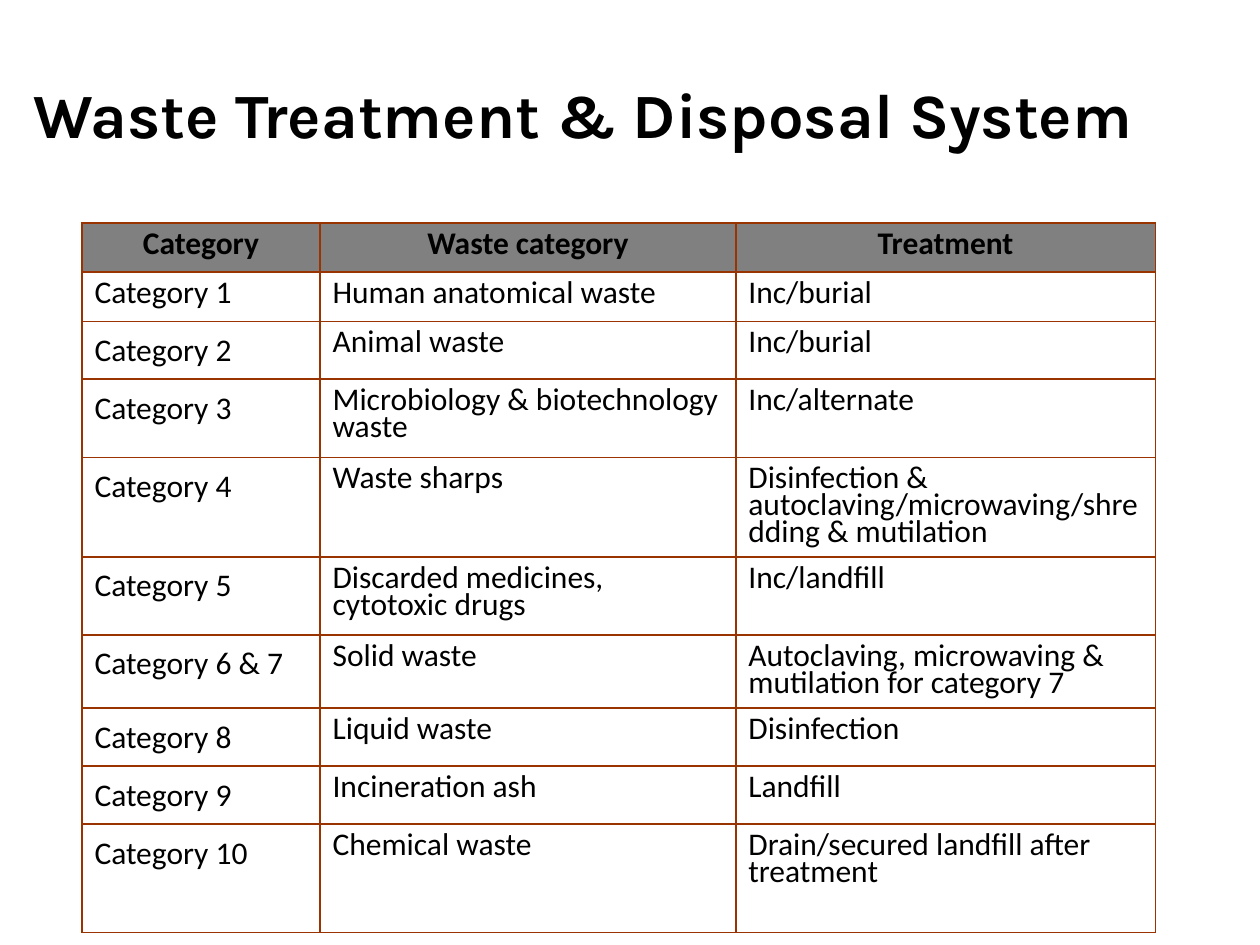
"""Build the slide on waste treatment and disposal by category."""
import dataclasses

import lxml.etree
import pptx
import pptx.dml.color
import pptx.enum.text
import pptx.oxml.ns
import pptx.util

ALIGN = pptx.enum.text.PP_ALIGN


@dataclasses.dataclass(frozen=True)
class Theme:
    ink: str = "000000"
    header_fill: str = "808080"
    border: str = "993300"
    border_width: float = 1
    title_font: str = "Karla"
    title_size: float = 36
    body_font: str = "Calibri"
    body_size: float = 18
    tight: float = 0.7


class WasteSlide:
    columns, rows = 100, 75

    def __init__(self, deck, theme):
        self.theme = theme
        self.column = deck.slide_width / self.columns
        self.row = deck.slide_height / self.rows
        self.slide = deck.slides.add_slide(deck.slide_layouts[6])

    def across(self, columns):
        return pptx.util.Emu(round(columns * self.column))

    def down(self, rows):
        return pptx.util.Emu(round(rows * self.row))

    def inset(self, holder, side, end):
        margins = {"margin_left": self.across(side), "margin_right": self.across(side),
                   "margin_top": self.down(end), "margin_bottom": self.down(end)}
        for name, value in margins.items():
            setattr(holder, name, value)

    def wording(self, frame, words, font, size, bold, align=ALIGN.LEFT, spacing=1.0):
        frame.word_wrap = True
        paragraph = frame.paragraphs[0]
        run = paragraph.add_run()
        run.text = words
        run.font.color.rgb = pptx.dml.color.RGBColor.from_string(self.theme.ink)
        formats = {
            "paragraph": (paragraph, {"alignment": align, "line_spacing": spacing}),
            "font": (run.font, {"name": font, "size": pptx.util.Pt(size), "bold": bold}),
        }
        for target, values in formats.values():
            for name, value in values.items():
                setattr(target, name, value)

    def title(self, words, left, top, width, height):
        heading = self.slide.shapes.add_textbox(
            self.across(left), self.down(top), self.across(width), self.down(height))
        self.inset(heading.text_frame, 1, 1)
        self.wording(heading.text_frame, words, self.theme.title_font,
                     self.theme.title_size, True)

    def outline(self, cell):
        properties = cell._tc.get_or_add_tcPr()
        width = str(int(pptx.util.Pt(self.theme.border_width)))
        qn = pptx.oxml.ns.qn
        for position, side in enumerate(("a:lnL", "a:lnR", "a:lnT", "a:lnB")):
            line = lxml.etree.Element(qn(side), w=width)
            fill = lxml.etree.SubElement(line, qn("a:solidFill"))
            lxml.etree.SubElement(fill, qn("a:srgbClr"), val=self.theme.border)
            properties.insert(position, line)

    def cell(self, cell, words, header, spacing):
        self.inset(cell, 1, 0.8)
        if header:
            cell.fill.solid()
            cell.fill.fore_color.rgb = pptx.dml.color.RGBColor.from_string(
                self.theme.header_fill)
        else:
            cell.fill.background()
        self.outline(cell)
        self.wording(cell.text_frame, words, self.theme.body_font, self.theme.body_size,
                     header, ALIGN.CENTER if header else ALIGN.LEFT, spacing)

    def table(self, records, left, top, widths, heights):
        grid = self.slide.shapes.add_table(
            len(records), len(widths), self.across(left), self.down(top),
            self.across(sum(widths)), self.down(sum(heights))).table
        for column, width in zip(grid.columns, widths):
            column.width = self.across(width)
        for row, height in zip(grid.rows, heights):
            row.height = self.down(height)
        for r, record in enumerate(records):
            for c, words in enumerate(record):
                loose = c == 0 and r > 1
                self.cell(grid.cell(r, c), words, r == 0,
                          1.0 if loose else self.theme.tight)


TREATMENTS = [
    ("Category", "Waste category", "Treatment"),
    ("Category 1", "Human anatomical waste", "Inc/burial"),
    ("Category 2", "Animal waste", "Inc/burial"),
    ("Category 3", "Microbiology & biotechnology waste", "Inc/alternate"),
    ("Category 4", "Waste sharps",
     "Disinfection & autoclaving/microwaving/shredding & mutilation"),
    ("Category 5", "Discarded medicines, cytotoxic drugs", "Inc/landfill"),
    ("Category 6 & 7", "Solid waste",
     "Autoclaving, microwaving & mutilation for category 7"),
    ("Category 8", "Liquid waste", "Disinfection"),
    ("Category 9", "Incineration ash", "Landfill"),
    ("Category 10", "Chemical waste", "Drain/secured landfill after treatment"),
]


def main():
    deck = pptx.Presentation()
    deck.slide_width = pptx.util.Inches(10)
    deck.slide_height = pptx.util.Inches(7.5)
    page = WasteSlide(deck, Theme())
    page.title("Waste Treatment & Disposal System", 1.7, 5, 90.7, 10.8)
    page.table(TREATMENTS, 6.5, 17.7, (18.9, 33, 33.3),
               (3.9, 3.9, 3.9, 6.2, 3.9, 6.2, 4, 3.9, 4, 8.6))
    deck.save("out.pptx")


if __name__ == "__main__":
    main()
